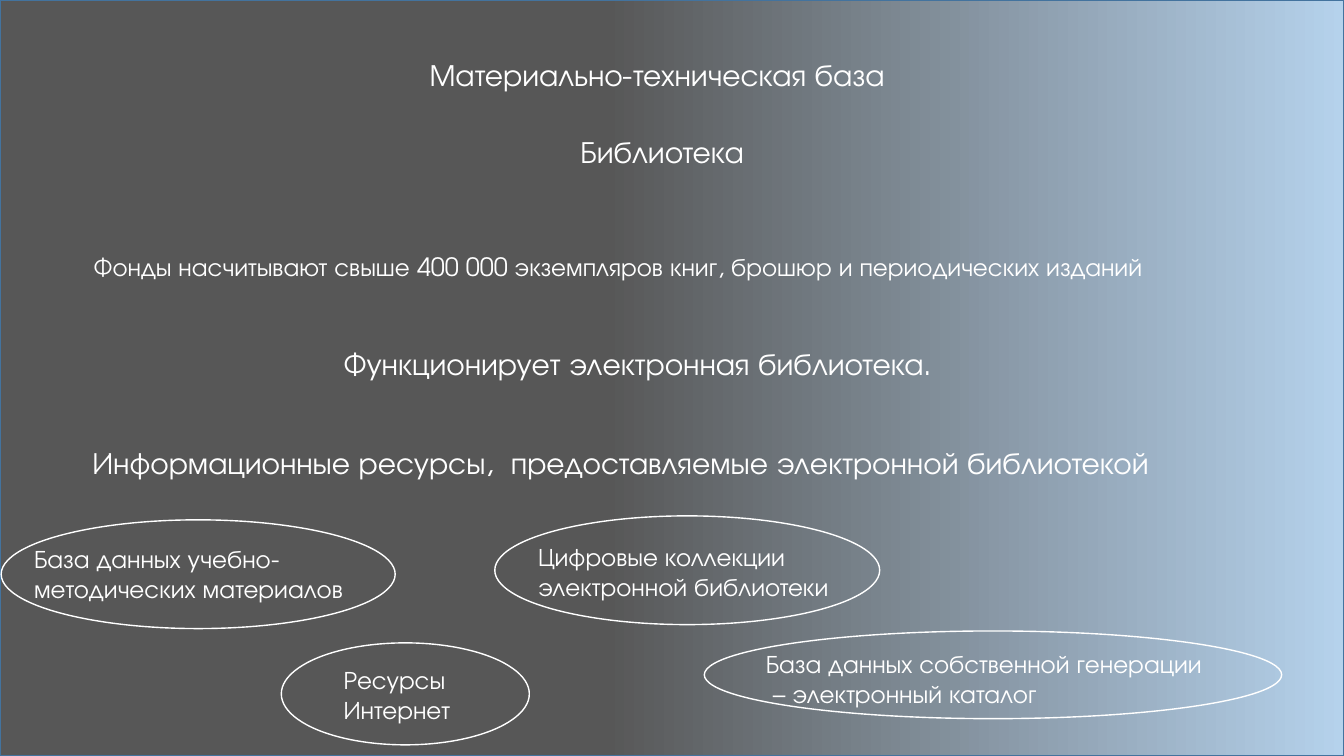
from dataclasses import dataclass

from pptx import Presentation
from pptx.dml.color import RGBColor
from pptx.enum.shapes import MSO_SHAPE
from pptx.enum.text import MSO_ANCHOR, MSO_AUTO_SIZE, PP_ALIGN
from pptx.util import Cm, Pt


@dataclass(frozen=True)
class Theme:
    """Colours, font and type sizes of the slide."""
    font: str = "TeX Gyre Adventor"
    text: RGBColor = RGBColor(0xFF, 0xFF, 0xFF)
    dark: RGBColor = RGBColor(0x57, 0x57, 0x57)
    light: RGBColor = RGBColor(0xB5, 0xD2, 0xEC)
    border: RGBColor = RGBColor(0x43, 0x73, 0x9E)
    heading: Pt = Pt(22)
    body: Pt = Pt(18)
    line: Pt = Pt(1)


THEME = Theme()
SLIDE_SIZE = (33.87, 19.05)
GRADIENT_START = 0.45

TITLE = ("Материально-техническая база", (10.57, 1.27, 13.08, 1.19))
STATEMENTS = [
    ("Библиотека", THEME.heading, (14.38, 3.23, 5.13, 1.19)),
    ("Фонды насчитывают свыше 400 000 экземпляров книг, брошюр и периодических изданий",
     THEME.body, (2.11, 6.2, 29.64, 1.02)),
    ("Функционирует электронная библиотека.", THEME.heading, (8.41, 8.56, 17.04, 1.19)),
    ("Информационные ресурсы,  предоставляемые электронной библиотекой",
     THEME.heading, (2.08, 11.05, 30.48, 1.19)),
]
RESOURCES = [
    ("База данных учебно-\vметодических материалов",
     (0.61, 13.56, 9.45, 1.8), (0.03, 13.1, 9.93, 2.74)),
    ("Ресурсы\vИнтернет", (8.41, 16.61, 3.53, 1.8), (7.09, 16.2, 6.25, 2.57)),
    ("Цифровые коллекции\vэлектронной библиотеки",
     (13.31, 13.51, 8.86, 1.8), (12.47, 13, 9.7, 2.74)),
    ("База данных собственной генерации\v – электронный каталог",
     (19.05, 16.2, 12.65, 1.8), (17.75, 15.9, 14.55, 2.21)),
]


def to_lengths(box):
    """Turn centimetre values into slide lengths."""
    return [Cm(value) for value in box]


def write_text(shape, text, size):
    """Fill a shape with left-aligned white text."""
    frame = shape.text_frame
    frame.word_wrap = True
    frame.auto_size = MSO_AUTO_SIZE.NONE
    frame.vertical_anchor = MSO_ANCHOR.TOP
    paragraph = frame.paragraphs[0]
    paragraph.text = text
    paragraph.alignment = PP_ALIGN.LEFT
    paragraph.font.name = THEME.font
    paragraph.font.size = size
    paragraph.font.color.rgb = THEME.text


def add_label(slide, text, size, box):
    """Add a text box at the given place."""
    write_text(slide.shapes.add_textbox(*to_lengths(box)), text, size)


def add_outlined(slide, kind, box, color):
    """Add an unfilled shape with a thin outline."""
    shape = slide.shapes.add_shape(kind, *to_lengths(box))
    shape.shadow.inherit = False
    shape.fill.background()
    shape.line.color.rgb = color
    shape.line.width = THEME.line
    return shape


def add_backdrop(slide):
    """Add the gradient panel behind everything else."""
    panel = add_outlined(slide, MSO_SHAPE.RECTANGLE, (0, 0, *SLIDE_SIZE), THEME.border)
    panel.fill.gradient()
    panel.fill.gradient_angle = 0
    stops = [(GRADIENT_START, THEME.dark), (1, THEME.light)]
    for stop, (position, color) in zip(panel.fill.gradient_stops, stops):
        stop.position = position
        stop.color.rgb = color
    slide.shapes.title.element.addprevious(panel.element)


def main():
    """Build and save the slide."""
    presentation = Presentation()
    presentation.slide_width, presentation.slide_height = to_lengths(SLIDE_SIZE)
    slide = presentation.slides.add_slide(presentation.slide_layouts[5])
    add_backdrop(slide)
    text, box = TITLE
    title = slide.shapes.title
    title.left, title.top, title.width, title.height = to_lengths(box)
    write_text(title, text, THEME.heading)
    for text, size, box in STATEMENTS:
        add_label(slide, text, size, box)
    for text, label_box, ellipse_box in RESOURCES:
        add_label(slide, text, THEME.body, label_box)
        add_outlined(slide, MSO_SHAPE.OVAL, ellipse_box, THEME.text)
    presentation.save("out.pptx")


if __name__ == "__main__":
    main()
